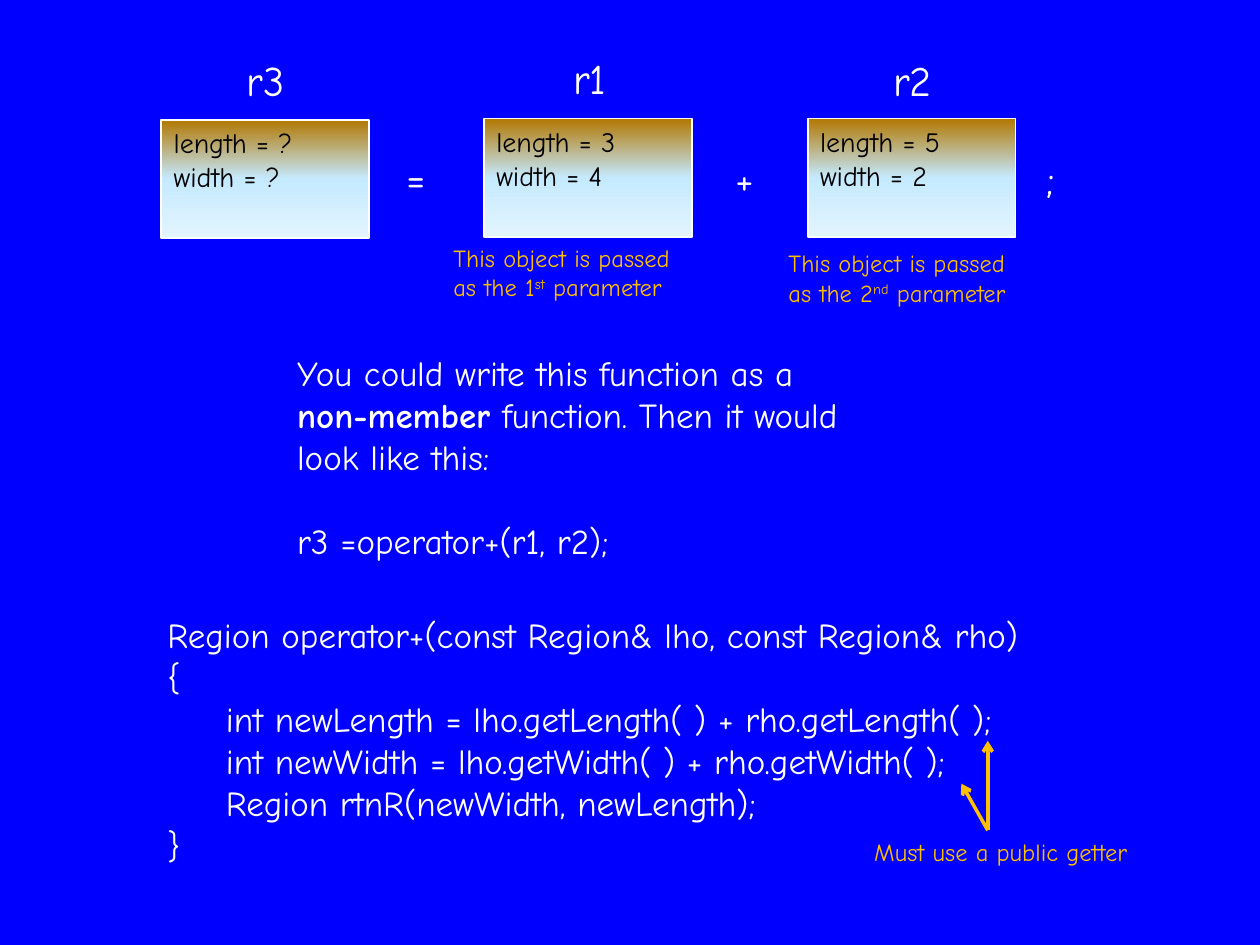
"""Build a slide on writing operator+ as a non-member function."""
from copy import deepcopy
from dataclasses import dataclass

from pptx import Presentation
from pptx.dml.color import RGBColor
from pptx.enum.shapes import MSO_CONNECTOR, MSO_SHAPE
from pptx.enum.text import MSO_ANCHOR, MSO_AUTO_SIZE, PP_ALIGN
from pptx.oxml import parse_xml
from pptx.oxml.ns import nsdecls
from pptx.util import Inches, Pt

RECTANGLE = MSO_SHAPE.RECTANGLE
STRAIGHT = MSO_CONNECTOR.STRAIGHT
LEFT = PP_ALIGN.LEFT
TOP = MSO_ANCHOR.TOP
FIT_TEXT = MSO_AUTO_SIZE.SHAPE_TO_FIT_TEXT


@dataclass(frozen=True)
class Theme:
    font: str = "Comic Neue"
    background: RGBColor = RGBColor(0x00, 0x00, 0xFF)
    text: RGBColor = RGBColor(0xFF, 0xFF, 0xFF)
    field: RGBColor = RGBColor(0x00, 0x00, 0x00)
    note: RGBColor = RGBColor(0xFF, 0xC0, 0x00)
    gradient: tuple = ((0, "B27700"), (0.5, "C5EAFF"), (1, "E3F4FF"))
    symbol_size: Pt = Pt(24)
    body_size: Pt = Pt(20)
    field_size: Pt = Pt(16)
    note_size: Pt = Pt(14)


theme = Theme()


def write(frame, lines, size, color):
    for index, line in enumerate(lines):
        paragraph = frame.paragraphs[0] if index == 0 else frame.add_paragraph()
        paragraph.alignment = LEFT
        paragraph.font.name = theme.font
        paragraph.font.size = size
        paragraph.font.color.rgb = color
        for part in [line] if isinstance(line, str) else line:
            text, style = (part, None) if isinstance(part, str) else part
            run = paragraph.add_run()
            run.text = text
            if style == "bold":
                run.font.bold = True
            elif style == "superscript":
                run.font._element.set("baseline", "30000")


def add_text(left, top, width, height, lines, size, color):
    box = slide.shapes.add_textbox(Inches(left), Inches(top), Inches(width), Inches(height))
    frame = box.text_frame
    frame.word_wrap = False
    frame.auto_size = FIT_TEXT
    write(frame, lines, size, color)
    return frame


prs = Presentation()
prs.slide_width = Inches(10)
prs.slide_height = Inches(7.5)
slide = prs.slides.add_slide(prs.slide_layouts[6])
slide.background.fill.solid()
slide.background.fill.fore_color.rgb = theme.background

regions = [
    (1.28, 0.95, ["length = ?", "width = ?"]),
    (3.84, 0.94, ["length = 3", "width = 4"]),
    (6.41, 0.94, ["length = 5", "width = 2"]),
]
for left, top, fields in regions:
    region = slide.shapes.add_shape(RECTANGLE, Inches(left), Inches(top), Inches(1.65), Inches(0.94))
    region.shadow.inherit = False
    region.line.color.rgb = theme.text
    region.line.width = Pt(1)
    region.fill.gradient()
    region.fill.gradient_angle = 270
    stop_list = region._element.xpath(".//a:gsLst")[0]
    stop_list.append(deepcopy(stop_list[-1]))
    for stop, (position, color) in zip(region.fill.gradient_stops, theme.gradient):
        stop.position = position
        stop.color.rgb = RGBColor.from_string(color)
    region.text_frame.vertical_anchor = TOP
    write(region.text_frame, fields, theme.field_size, theme.field)

symbols = [
    ("r3", 1.86, 0.38, 0.57),
    ("r1", 4.45, 0.37, 0.51),
    ("r2", 6.99, 0.38, 0.57),
    ("=", 3.13, 1.15, 0.37),
    ("+", 5.74, 1.16, 0.36),
    (";", 8.21, 1.16, 0.3),
]
for symbol, left, top, width in symbols:
    add_text(left, top, width, 0.5, [symbol], theme.symbol_size, theme.text)

for left, top, number, suffix in [(3.5, 1.88, "1", "st"), (6.16, 1.92, "2", "nd")]:
    note = ["This object is passed", ["as the " + number, (suffix, "superscript"), " parameter"]]
    add_text(left, top, 2.14, 0.57, note, theme.note_size, theme.note)

explanation = add_text(2.26, 2.74, 4.94, 1.78, [
    "You could write this function as a",
    [("non-member", "bold"), " function. Then it would"],
    "look like this:",
    "r3 =operator+(r1, r2);",
], theme.body_size, theme.text)
explanation.paragraphs[-1].space_before = Pt(24)

add_text(1.23, 4.82, 7.47, 2.12, [
    "Region operator+(const Region& lho, const Region& rho)",
    "{",
    "     int newLength = lho.getLength( ) + rho.getLength( );",
    "     int newWidth = lho.getWidth( ) + rho.getWidth( );",
    "     Region rtnR(newWidth, newLength);",
    "}",
], theme.body_size, theme.text)

add_text(6.84, 6.59, 2.43, 0.34, ["Must use a public getter"], theme.note_size, theme.note)

for end_x, end_y in [(7.84, 5.88), (7.63, 6.22)]:
    arrow = slide.shapes.add_connector(STRAIGHT, Inches(7.84), Inches(6.59), Inches(end_x), Inches(end_y))
    arrow.line.color.rgb = theme.note
    arrow.line.width = Pt(2)
    arrow.line._get_or_add_ln().append(parse_xml(f'<a:tailEnd {nsdecls("a")} type="arrow"/>'))
    arrow._element.spPr.append(parse_xml(f'<a:effectLst {nsdecls("a")}/>'))

prs.save("out.pptx")
